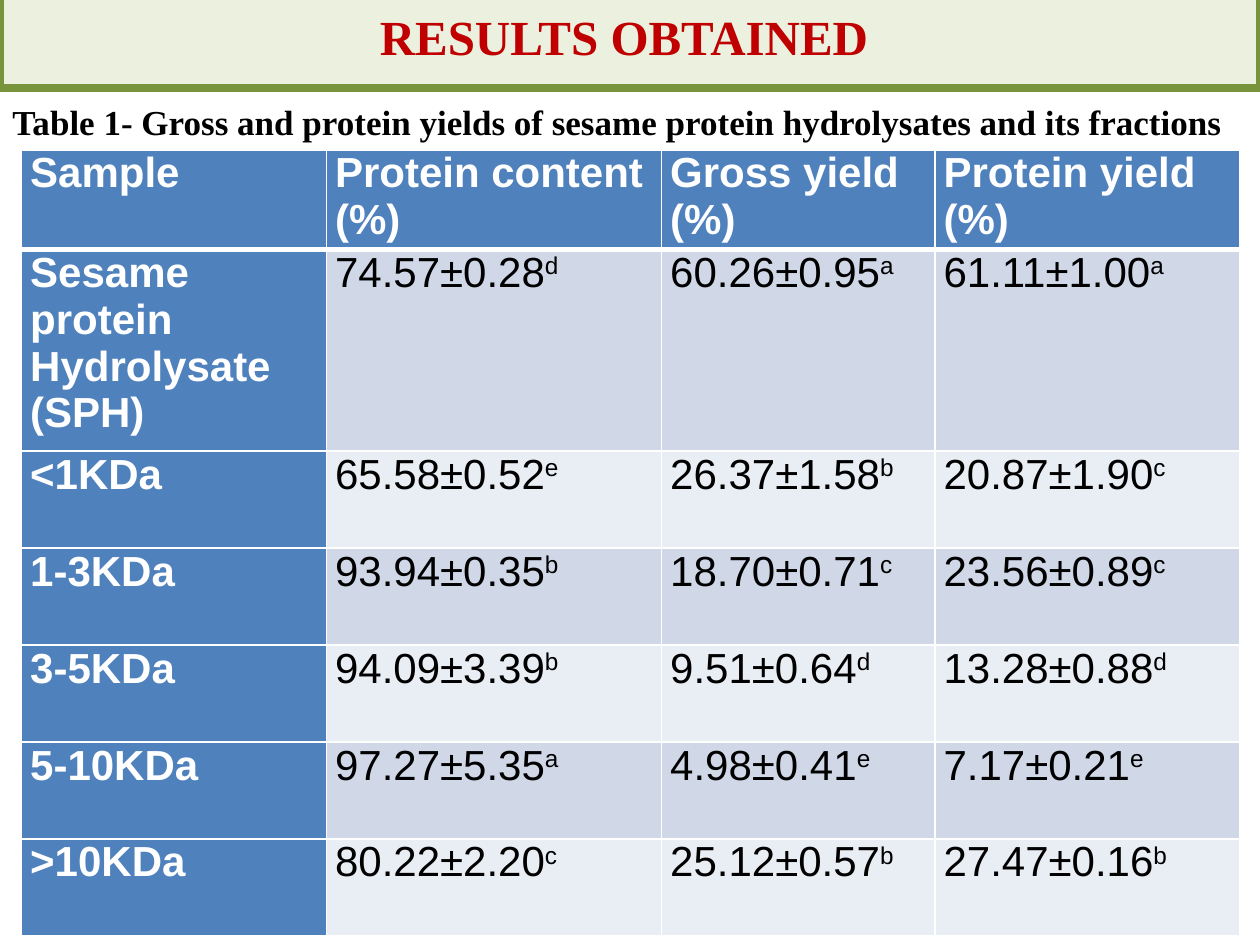
"""Build a results slide with a table of sesame protein hydrolysate yields."""
from dataclasses import dataclass

import pptx
import pptx.chart.data
import pptx.dml.color
import pptx.enum.shapes
import pptx.enum.text
import pptx.oxml
import pptx.util
from pptx.util import Inches


@dataclass(frozen=True)
class Theme:
    serif: str = "Times New Roman"
    sans: str = "Arial"
    title_size: int = 28
    caption_size: int = 20
    table_size: int = 24
    red: str = "C00000"
    black: str = "000000"
    white: str = "FFFFFF"
    banner: str = "EBF1DE"
    banner_line: str = "77933C"
    header: str = "4F81BD"
    bands: tuple = ("D0D8E8", "E9EDF4")


theme = Theme()
rgb = pptx.dml.color.RGBColor.from_string


def add_text(paragraph, text, *, font, size, color, bold=False, superscript=False):
    """Append one formatted run to a paragraph."""
    run = paragraph.add_run()
    run.text = text
    run.font.name = font
    run.font.size = pptx.util.Pt(size)
    run.font.color.rgb = rgb(color)
    run.font.bold = bold
    if superscript:
        run.font._element.set("baseline", "30000")


def set_borders(cell, bottom_width):
    """Give a cell white borders, with its own width at the bottom."""
    properties = cell._tc.get_or_add_tcPr()
    widths = {"lnL": 1, "lnR": 1, "lnT": 1, "lnB": bottom_width}
    for position, (side, width) in enumerate(widths.items()):
        border = pptx.oxml.parse_xml(
            f'<a:{side} xmlns:a="http://schemas.openxmlformats.org/drawingml/2006/main" '
            f'w="{pptx.util.Pt(width)}"><a:solidFill><a:srgbClr val="{theme.white}"/>'
            f"</a:solidFill></a:{side}>"
        )
        properties.insert(position, border)


presentation = pptx.Presentation()
presentation.slide_width = Inches(10)
presentation.slide_height = Inches(7.5)
slide = presentation.slides.add_slide(presentation.slide_layouts[6])

banner = slide.shapes.add_shape(
    pptx.enum.shapes.MSO_SHAPE.RECTANGLE, Inches(0), Inches(-0.13), Inches(10), Inches(0.83)
)
banner.shadow.inherit = False
banner.fill.solid()
banner.fill.fore_color.rgb = rgb(theme.banner)
banner.line.color.rgb = rgb(theme.banner_line)
banner.line.width = pptx.util.Pt(4.5)
banner.text_frame.vertical_anchor = pptx.enum.text.MSO_ANCHOR.MIDDLE
paragraph = banner.text_frame.paragraphs[0]
paragraph.alignment = pptx.enum.text.PP_ALIGN.CENTER
add_text(paragraph, "RESULTS OBTAINED ", font=theme.serif, size=theme.title_size,
         color=theme.red, bold=True)

headings = ["Sample", "Protein content (%)", "Gross yield (%)", "Protein yield (%)"]
results = [
    ("Sesame protein Hydrolysate (SPH)", "74.57±0.28d", "60.26±0.95a", "61.11±1.00a"),
    ("<1KDa", "65.58±0.52e", "26.37±1.58b", "20.87±1.90c"),
    ("1-3KDa", "93.94±0.35b", "18.70±0.71c", "23.56±0.89c"),
    ("3-5KDa", "94.09±3.39b", "9.51±0.64d", "13.28±0.88d"),
    ("5-10KDa", "97.27±5.35a", "4.98±0.41e", "7.17±0.21e"),
    (">10KDa", "80.22±2.20c", "25.12±0.57b", "27.47±0.16b"),
]
column_widths = [2.42, 2.66, 2.17, 2.42]
row_heights = [0.79, 1.6] + [0.77] * 5
table = slide.shapes.add_table(
    len(row_heights), len(column_widths), Inches(0.17), Inches(1.19),
    Inches(sum(column_widths)), Inches(sum(row_heights))
).table
for column, width in zip(table.columns, column_widths):
    column.width = Inches(width)
for row, height in zip(table.rows, row_heights):
    row.height = Inches(height)

for row_index, values in enumerate([headings, *results]):
    for column_index, value in enumerate(values):
        cell = table.cell(row_index, column_index)
        cell.margin_left = cell.margin_right = Inches(0.07)
        cell.margin_top = cell.margin_bottom = Inches(0)
        is_heading = row_index == 0 or column_index == 0
        cell.fill.solid()
        cell.fill.fore_color.rgb = rgb(
            theme.header if is_heading else theme.bands[(row_index - 1) % 2]
        )
        set_borders(cell, 3 if row_index == 0 else 1)
        paragraph = cell.text_frame.paragraphs[0]
        style = dict(font=theme.sans, size=theme.table_size)
        if is_heading:
            add_text(paragraph, value, color=theme.white, bold=True, **style)
        else:
            add_text(paragraph, value[:-1], color=theme.black, **style)
            add_text(paragraph, value[-1], color=theme.black, superscript=True, **style)

caption = slide.shapes.add_textbox(Inches(0), Inches(0.75), Inches(9.93), Inches(0.44))
caption.text_frame.word_wrap = False
add_text(
    caption.text_frame.paragraphs[0],
    "Table 1- Gross and protein yields of sesame protein hydrolysates and its fractions ",
    font=theme.serif, size=theme.caption_size, color=theme.black, bold=True,
)

presentation.save("out.pptx")
